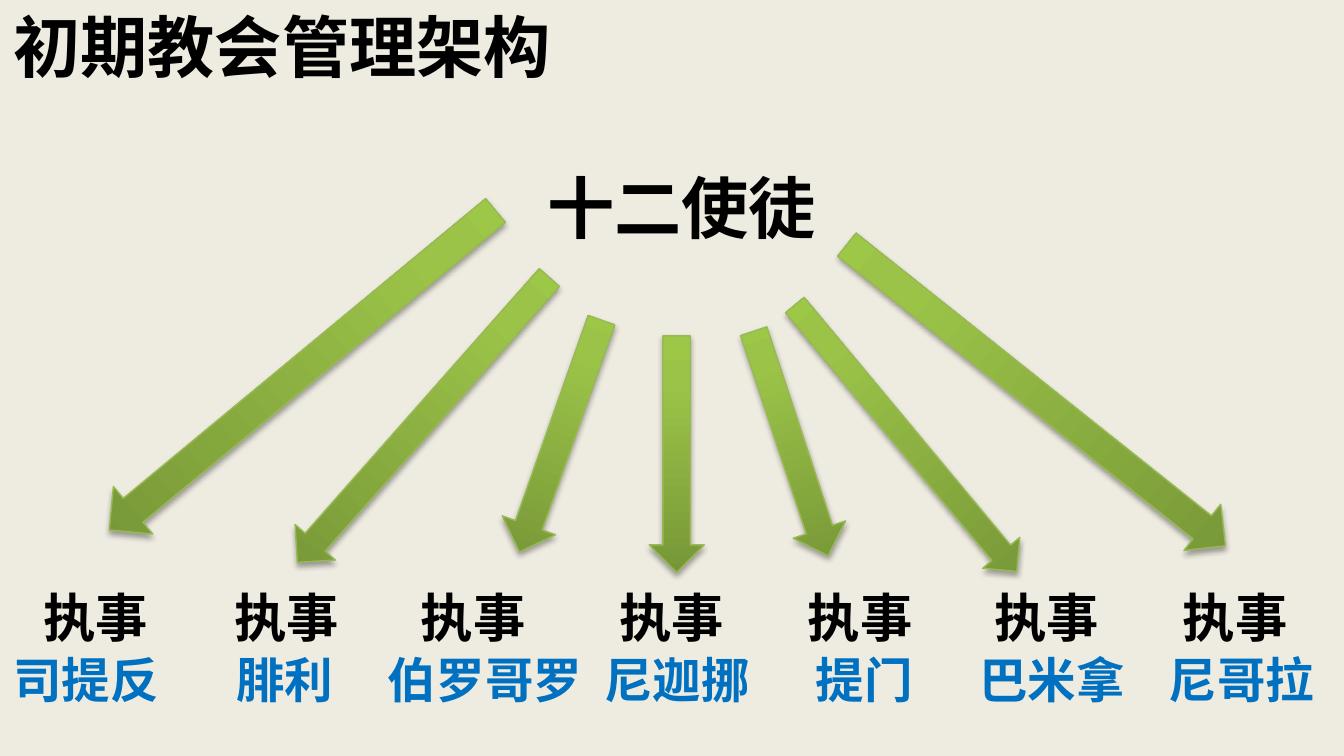
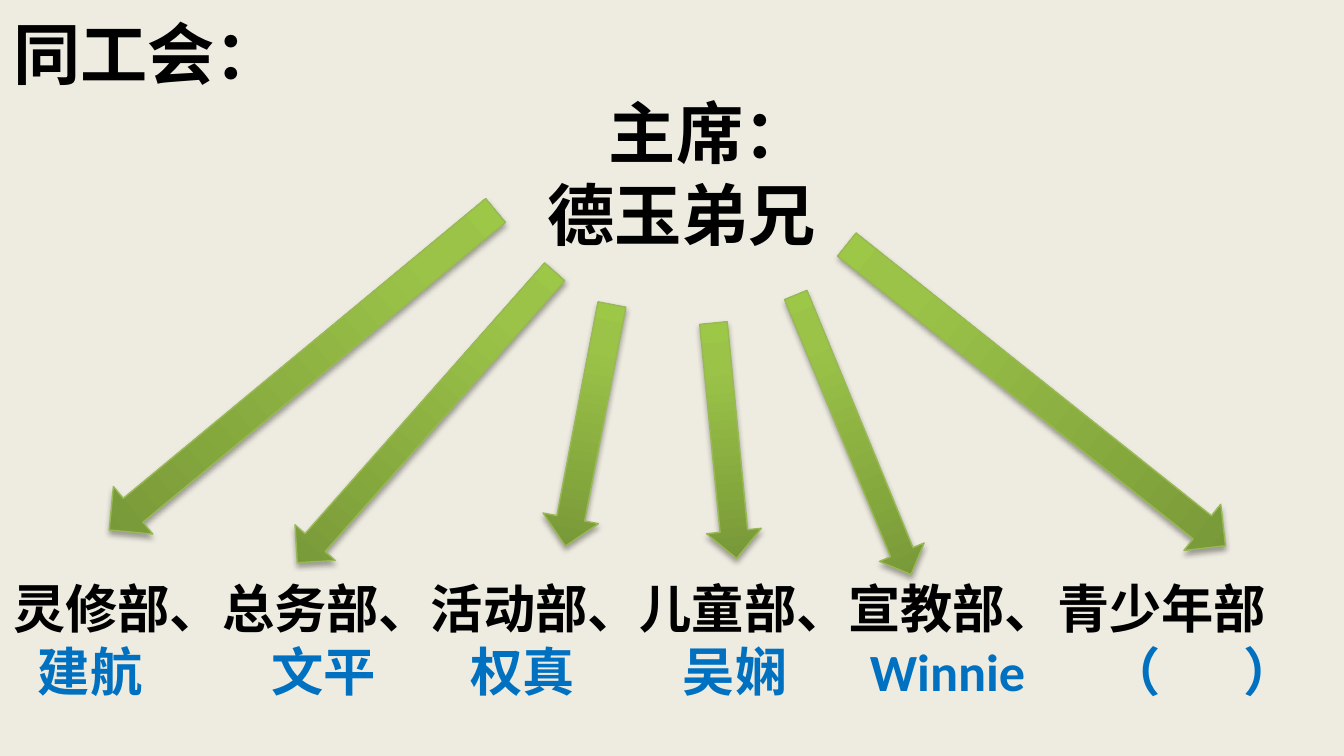
from lxml.etree import SubElement
from pptx import Presentation
from pptx.dml.color import RGBColor
from pptx.enum.shapes import MSO_SHAPE
from pptx.enum.text import MSO_ANCHOR, PP_ALIGN
from pptx.oxml.ns import qn
from pptx.util import Inches, Pt

BACKGROUND = RGBColor(0xEE, 0xEC, 0xE1)
BLACK = RGBColor(0, 0, 0)
BLUE = RGBColor(0x00, 0x70, 0xC0)
ARROW_LINE = RGBColor(0x98, 0xB9, 0x55)
ARROW_STOPS = [(0, "779737"), (80, "9BC348"), (100, "9DC746")]
FONT = "Calibri"
LEFT_MARGIN = 0.1

HEADING = {"size": Pt(36), "color": BLACK}
ROLE = {"size": Pt(28), "color": BLACK}
DEACON = {"size": Pt(26), "color": BLUE}
LEADER = {"size": Pt(28), "color": BLUE}

# Arrows: left, top, width, height, rotation
OUTER_ARROWS = [(2.02, 0.89, 0.46, 3.73, 50.4), (7.49, 1.14, 0.44, 3.6, 308.5)]

# Left-aligned lines: text, middle y, style
# Rows: middle y, style, [(text, middle x)]
SLIDES = [
    {
        "lines": [("初期教会管理架构", 0.34, HEADING)],
        "rows": [
            (1.54, HEADING, [("十二使徒", 5.07)]),
            (4.59, ROLE, [("执事", x) for x in
                          (0.71, 2.13, 3.52, 5.0, 6.4, 7.79, 9.19)]),
            (5.05, DEACON, [("司提反", 0.64), ("腓利", 2.12), ("伯罗哥罗", 3.61),
                            ("尼迦挪", 5.04), ("提门", 6.43), ("巴米拿", 7.83),
                            ("尼哥拉", 9.24)]),
        ],
        "arrows": OUTER_ARROWS + [
            (2.95, 1.71, 0.4, 2.83, 41.5),
            (3.96, 2.33, 0.42, 1.83, 19.5),
            (4.83, 2.5, 0.41, 1.76, 0),
            (5.68, 2.42, 0.41, 1.76, 341.7),
            (6.56, 1.97, 0.36, 2.58, 320.2),
        ],
    },
    {
        "lines": [
            ("同工会：", 0.39, HEADING),
            ("灵修部、总务部、活动部、儿童部、宣教部、青少年部", 4.52, ROLE),
        ],
        "rows": [
            (0.98, HEADING, [("主席：", 5.28)]),
            (1.59, HEADING, [("德玉弟兄", 5.07)]),
            (4.99, LEADER, [("建航", 0.67), ("文平", 2.41), ("权真", 3.89),
                            ("吴娴", 5.47), ("Winnie", 7.05), ("（", 8.44),
                            ("）", 9.45)]),
        ],
        "arrows": OUTER_ARROWS + [
            (2.97, 1.66, 0.4, 2.89, 41.5),
            (4.17, 2.25, 0.42, 1.83, 10.9),
            (5.19, 2.4, 0.41, 1.76, 354.4),
            (6.17, 2.11, 0.36, 2.25, 337.6),
        ],
    },
]


def add_text(page, text, left, middle, width, style, align):
    height = 0.6
    box = page.shapes.add_textbox(Inches(left), Inches(middle - height / 2),
                                  Inches(width), Inches(height))
    frame = box.text_frame
    layout = {"word_wrap": True, "vertical_anchor": MSO_ANCHOR.MIDDLE,
              "margin_left": 0, "margin_right": 0,
              "margin_top": 0, "margin_bottom": 0}
    for name, value in layout.items():
        setattr(frame, name, value)
    para = frame.paragraphs[0]
    para.alignment = align
    span = para.add_run()
    span.text = text
    for name, value in {"name": FONT, "bold": True, "size": style["size"]}.items():
        setattr(span.font, name, value)
    span.font.color.rgb = style["color"]


def add_color(parent, value):
    return SubElement(parent, qn("a:srgbClr"), val=value)


def add_arrow(page, left, top, width, height, rotation):
    arrow = page.shapes.add_shape(
        MSO_SHAPE.DOWN_ARROW, *map(Inches, (left, top, width, height)))
    arrow.rotation = rotation
    arrow.line.color.rgb = ARROW_LINE
    arrow.line.width = Pt(0.75)
    arrow.fill.gradient()
    arrow.fill.gradient_angle = 90
    properties = arrow._element.spPr
    stops = properties.find(qn("a:gradFill")).find(qn("a:gsLst"))
    for stop in list(stops):
        stops.remove(stop)
    for position, color in ARROW_STOPS:
        add_color(SubElement(stops, qn("a:gs"), pos=str(position * 1000)), color)

    arrow.shadow.inherit = False
    shadow = SubElement(properties.find(qn("a:effectLst")), qn("a:outerShdw"),
                        blurRad=str(Pt(3.1)), dist=str(Pt(1.8)),
                        dir="5400000", rotWithShape="0")
    SubElement(add_color(shadow, "000000"), qn("a:alpha"), val="35000")


def add_page(deck, content):
    page = deck.slides.add_slide(deck.slide_layouts[6])
    page.background.fill.solid()
    page.background.fill.fore_color.rgb = BACKGROUND
    for text, middle, style in content["lines"]:
        add_text(page, text, LEFT_MARGIN, middle, 9.8, style, PP_ALIGN.LEFT)
    for middle, style, labels in content["rows"]:
        for text, center in labels:
            width = (len(text) + 0.5) * style["size"].inches
            add_text(page, text, center - width / 2, middle, width, style,
                     PP_ALIGN.CENTER)
    for arrow in content["arrows"]:
        add_arrow(page, *arrow)


def main():
    deck = Presentation()
    deck.slide_width = Inches(10)
    deck.slide_height = deck.slide_width * 9 // 16
    for content in SLIDES:
        add_page(deck, content)
    deck.save("out.pptx")


if __name__ == "__main__":
    main()
